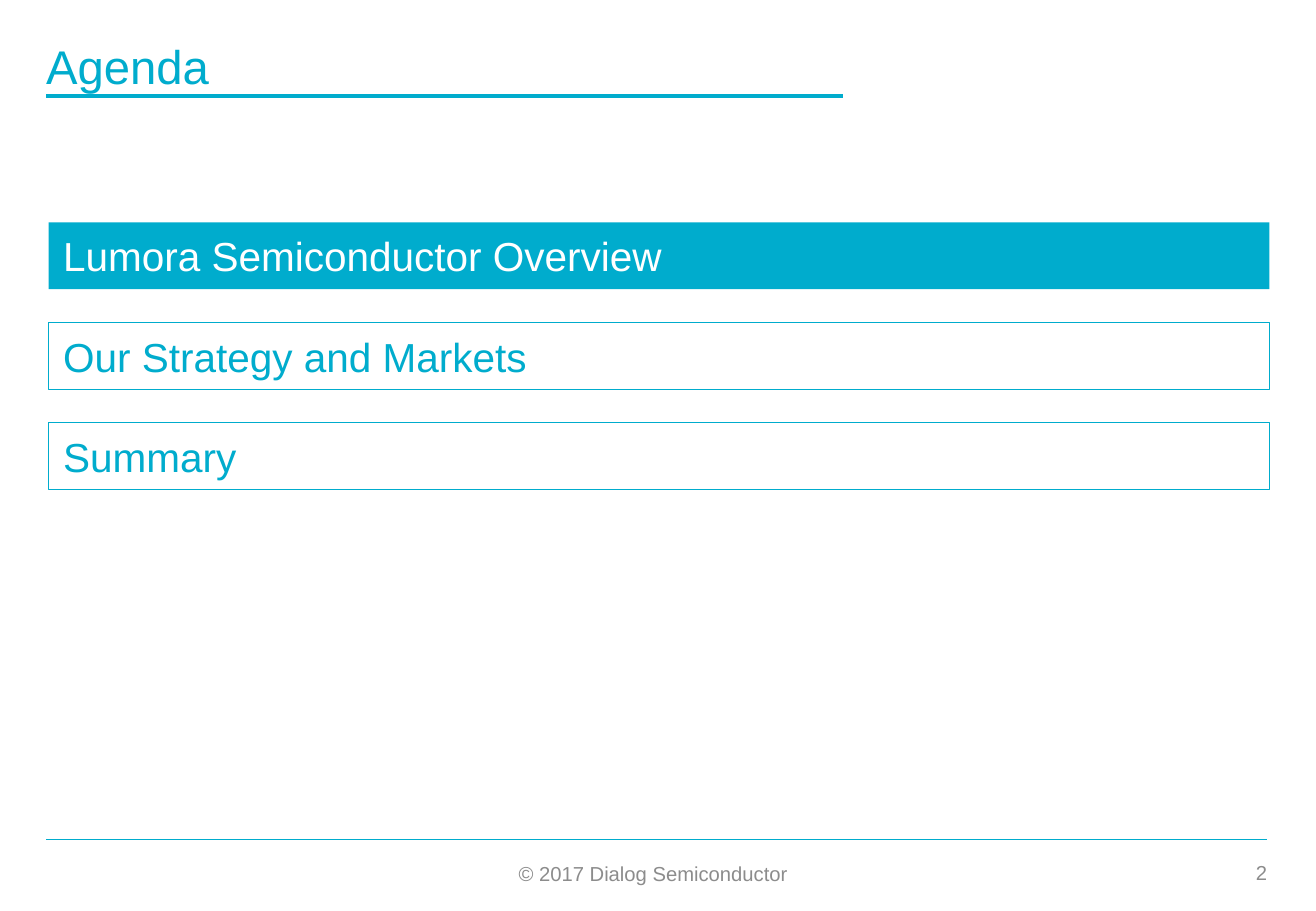
from dataclasses import dataclass

from lxml import etree
from pptx import Presentation
from pptx import util as u
from pptx.dml.color import RGBColor
from pptx.enum import shapes, text
from pptx.oxml.ns import qn


@dataclass(frozen=True)
class Theme:
    font: str = "Arial"
    accent: RGBColor = RGBColor(0x00, 0xAC, 0xCD)
    paper: RGBColor = RGBColor(0xFF, 0xFF, 0xFF)
    muted: RGBColor = RGBColor(0x8C, 0x8C, 0x8C)
    title_size: int = 28
    item_size: int = 24
    footer_size: int = 12


class AgendaSlide:
    def __init__(self, slide, theme):
        self.slide = slide
        self.theme = theme

    def place(self, part, left, top, width, height):
        part.left, part.top = u.Pt(left), u.Pt(top)
        part.width, part.height = u.Pt(width), u.Pt(height)

    def set_wording(self, part, wording, size, color, anchor, inset=0,
                    align=text.PP_ALIGN.LEFT):
        frame = part.text_frame
        frame.text = wording
        frame.word_wrap = True
        frame.auto_size = text.MSO_AUTO_SIZE.NONE
        frame.vertical_anchor = anchor
        frame.margin_left = frame.margin_right = u.Pt(inset)
        frame.margin_top = frame.margin_bottom = 0
        paragraph = frame.paragraphs[0]
        paragraph.alignment = align
        paragraph.space_before = u.Pt(0)
        font = paragraph.runs[0].font
        font.name, font.size, font.bold = self.theme.font, u.Pt(size), False
        font.color.rgb = color
        return paragraph

    def title(self, wording):
        heading = self.slide.shapes.title
        self.place(heading, 27.4, 26, 484, 30.2)
        paragraph = self.set_wording(heading, wording, self.theme.title_size,
                                     self.theme.accent, text.MSO_ANCHOR.BOTTOM)
        paragraph.line_spacing = 0.9

    def item(self, placeholder, wording, top, current):
        theme = self.theme
        self.place(placeholder, 28.8, top, 723.6, 39.6)
        placeholder.fill.solid()
        placeholder.fill.fore_color.rgb = theme.accent if current else theme.paper
        if current:
            placeholder.line.fill.background()
        else:
            placeholder.line.color.rgb = theme.accent
            placeholder.line.width = u.Pt(0.75)
        paragraph = self.set_wording(placeholder, wording, theme.item_size,
                                     theme.paper if current else theme.accent,
                                     text.MSO_ANCHOR.MIDDLE, inset=8.64)
        properties = paragraph._p.get_or_add_pPr()
        properties.set("marL", "0")
        properties.set("indent", "0")
        etree.SubElement(properties, qn("a:buNone"))

    def rule(self, left, right, y, weight):
        line = self.slide.shapes.add_connector(
            shapes.MSO_CONNECTOR.STRAIGHT, u.Pt(left), u.Pt(y), u.Pt(right), u.Pt(y))
        line.line.color.rgb = self.theme.accent
        line.line.width = u.Pt(weight)
        etree.SubElement(line._element.spPr, qn("a:effectLst"))

    def footer(self, wording, left, top, width, align):
        note = self.slide.shapes.add_textbox(
            u.Pt(left), u.Pt(top), u.Pt(width), u.Pt(14.4))
        self.set_wording(note, wording, self.theme.footer_size, self.theme.muted,
                         text.MSO_ANCHOR.MIDDLE, align=align)


def main():
    deck = Presentation()
    deck.slide_width, deck.slide_height = u.Pt(780), u.Pt(540)
    comparison_layout = deck.slide_layouts[4]
    agenda = AgendaSlide(deck.slides.add_slide(comparison_layout), Theme())

    agenda.rule(27.4, 751, 497.5, 0.5)
    agenda.rule(27.4, 499.7, 56.9, 2)
    agenda.title("Agenda")

    topics = ["Lumora Semiconductor Overview", "Our Strategy and Markets", "Summary"]
    *topic_boxes, spare = list(agenda.slide.placeholders)[1:]
    spare._element.getparent().remove(spare._element)
    for row, (box, topic) in enumerate(zip(topic_boxes, topics)):
        agenda.item(box, topic, 131.8 + 59.4 * row, current=row == 0)

    agenda.footer("© 2017 Dialog Semiconductor", 307.4, 510.5, 170,
                  text.PP_ALIGN.LEFT)
    agenda.footer("2", 705, 509.8, 46, text.PP_ALIGN.RIGHT)
    deck.save("out.pptx")


if __name__ == "__main__":
    main()
